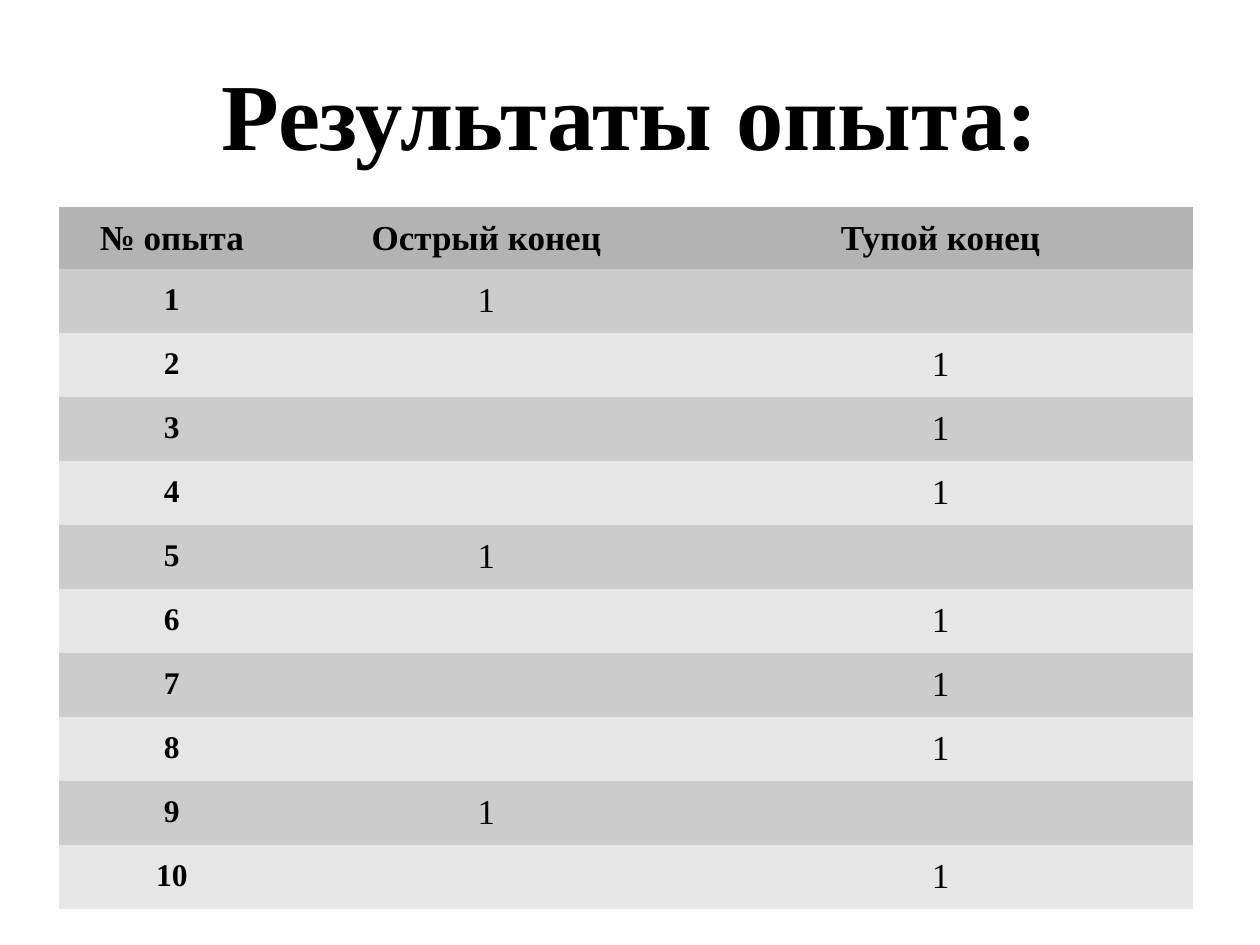
from dataclasses import dataclass

from lxml.etree import SubElement
from pptx import Presentation
from pptx.dml.color import RGBColor as Rgb
from pptx.enum.text import MSO_ANCHOR as Anchor, MSO_AUTO_SIZE as AutoSize, PP_ALIGN as Align
from pptx.oxml.ns import qn
from pptx.util import Cm, Pt

TITLE_ONLY = 5
HEADINGS = ("№ опыта", "Острый конец", "Тупой конец")
TRIALS = 10
SHARP_END_TRIALS = {1, 5, 9}


@dataclass(frozen=True)
class Theme:
    font: str = "Times New Roman"
    ink: str = "000000"
    border: str = "FFFFFF"
    header: str = "B3B3B3"
    bands: tuple = ("CCCCCC", "E6E6E6")
    title_size: int = 54
    cell_size: int = 20
    number_size: int = 18
    border_width: float = 0.03


def apply(target, values):
    for name, value in values.items():
        setattr(target, name, value)


class SlideBuilder:
    def __init__(self, slide, theme):
        self.slide = slide
        self.theme = theme

    def centred_text(self, paragraph, text, size, bold):
        paragraph.alignment = Align.CENTER
        run = paragraph.add_run()
        run.text = text
        apply(run.font, {"name": self.theme.font, "size": Pt(size), "bold": bold})
        run.font.color.rgb = Rgb.from_string(self.theme.ink)

    def title(self, text, left, top, width, height):
        heading = self.slide.shapes.title
        apply(heading, {"left": Cm(left), "top": Cm(top),
                        "width": Cm(width), "height": Cm(height)})
        apply(heading.text_frame, {"word_wrap": True, "auto_size": AutoSize.SHAPE_TO_FIT_TEXT,
                                   "vertical_anchor": Anchor.MIDDLE})
        self.centred_text(heading.text_frame.paragraphs[0], text, self.theme.title_size, True)

    def borders(self, cell):
        """Give the cell hairlines on all four sides, ahead of its fill."""
        properties = cell._tc.get_or_add_tcPr()
        for position, side in enumerate(("lnL", "lnR", "lnT", "lnB")):
            line = SubElement(properties, qn(f"a:{side}"), w=str(Pt(self.theme.border_width)))
            fill = SubElement(line, qn("a:solidFill"))
            SubElement(fill, qn("a:srgbClr"), val=self.theme.border)
            properties.insert(position, line)

    def cell(self, cell, text, size, bold, color):
        apply(cell, {"margin_left": Cm(0.25), "margin_right": Cm(0.25),
                     "margin_top": Cm(0.38), "margin_bottom": Cm(0.13),
                     "vertical_anchor": Anchor.TOP})
        cell.fill.solid()
        cell.fill.fore_color.rgb = Rgb.from_string(color)
        self.borders(cell)
        paragraph = cell.text_frame.paragraphs[0]
        if text:
            apply(paragraph, {"line_spacing": 0.81, "space_after": Pt(14.2)})
            self.centred_text(paragraph, text, size, bold)
        else:
            paragraph.font.size = Pt(self.theme.number_size)

    def table(self, rows, left, top, widths, header_height, row_height):
        theme = self.theme
        heights = [header_height] + [row_height] * (len(rows) - 1)
        grid = self.slide.shapes.add_table(
            len(rows), len(widths), Cm(left), Cm(top), Cm(sum(widths)), Cm(sum(heights))).table
        apply(grid, {"first_row": False, "horz_banding": False})
        for column, width in zip(grid.columns, widths):
            column.width = Cm(width)
        for r, (texts, height) in enumerate(zip(rows, heights)):
            grid.rows[r].height = Cm(height)
            color = theme.bands[(r - 1) % 2] if r else theme.header
            for c, text in enumerate(texts):
                is_number = r > 0 and c == 0
                size = theme.number_size if is_number else theme.cell_size
                self.cell(grid.cell(r, c), text, size, r == 0 or is_number, color)


def trial_row(number):
    marks = ("1", "") if number in SHARP_END_TRIALS else ("", "1")
    return (str(number), *marks)


def main():
    deck = Presentation()
    apply(deck, {"slide_width": Cm(25.4), "slide_height": Cm(19.05)})
    builder = SlideBuilder(deck.slides.add_slide(deck.slide_layouts[TITLE_ONLY]), Theme())
    builder.title("Результаты опыта:", 2.18, 1, 21.04, 2.56)
    results = [HEADINGS] + [trial_row(number) for number in range(1, TRIALS + 1)]
    builder.table(results, left=1.19, top=4.17, widths=(4.55, 8.13, 10.18),
                  header_height=1.25, row_height=1.29)
    deck.save("out.pptx")


if __name__ == "__main__":
    main()
